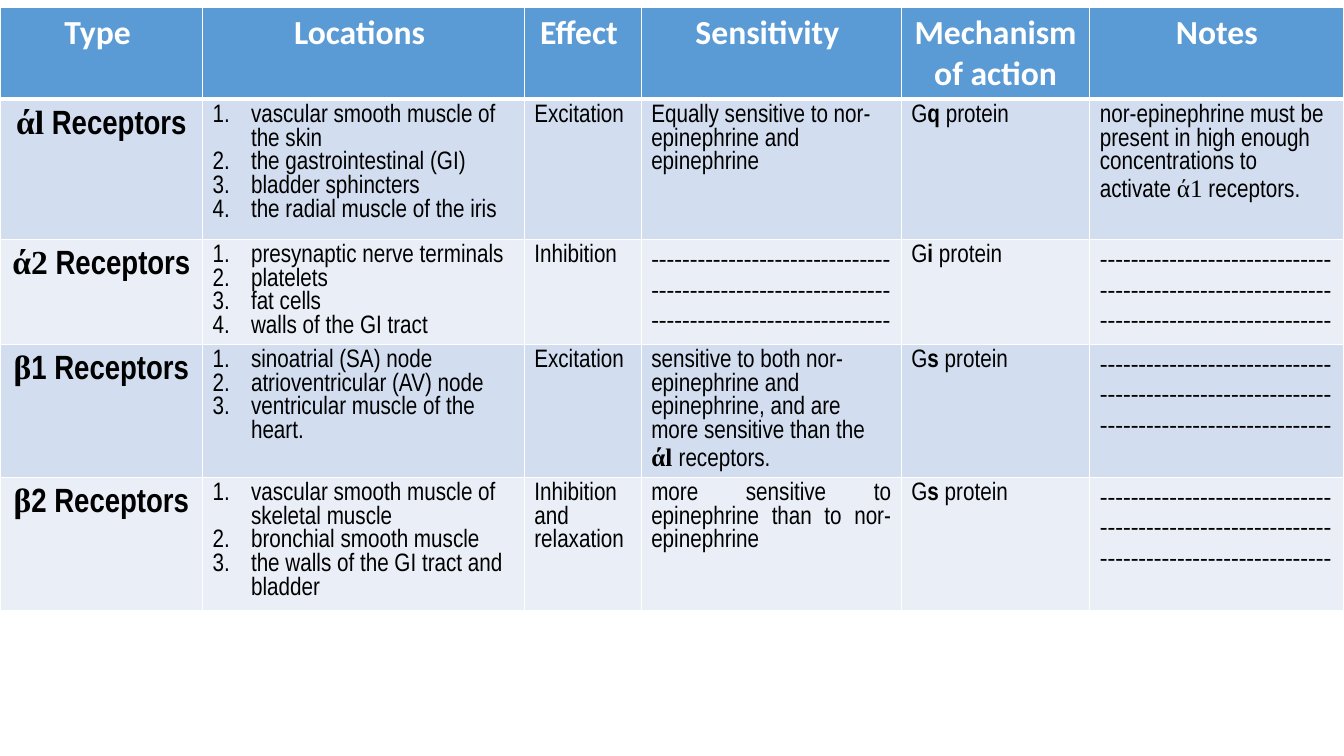
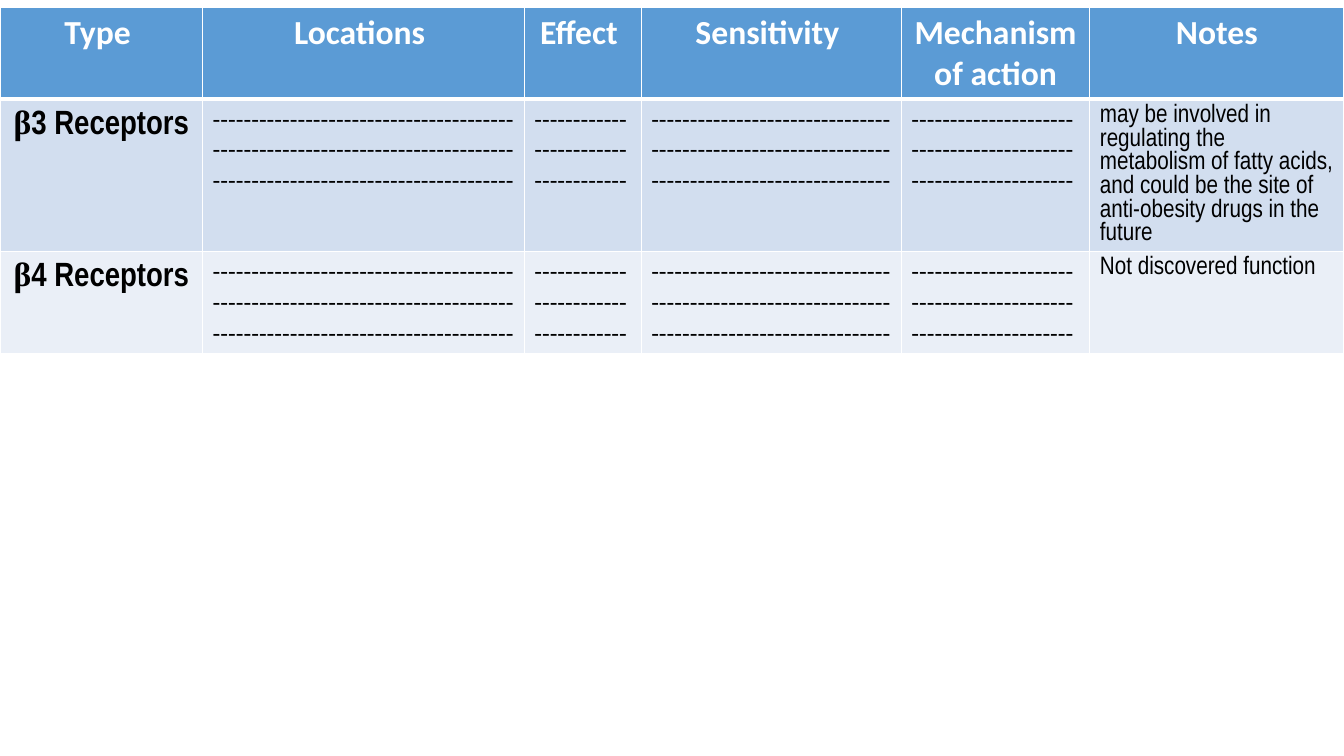
from dataclasses import dataclass

from lxml.etree import SubElement
from pptx import Presentation
from pptx.dml.color import RGBColor
from pptx.enum.text import PP_ALIGN
from pptx.oxml.ns import qn
from pptx.util import Emu, Pt

# Shared look
PIXEL = 9144  # 100 px to the inch
SLIDE_SIZE = (1333, 750)
TABLE_TOP = 7
COLUMN_WIDTHS = (201, 319, 116, 258, 187, 252)
HEADER_HEIGHT = 91
HEADINGS = ("Type ", "Locations ", "Effect ", "Sensitivity ", "Mechanism of action", "Notes")
LIST_INDENT = 38
HEADER_FILL, BAND_FILLS = "5B9BD5", ("D2DEEF", "EAEFF7")
BLACK, WHITE = "000000", "FFFFFF"
CALIBRI, NARROW, TIMES = "Calibri", "Arial Narrow", "Times New Roman"


@dataclass(frozen=True)
class Run:
    text: str
    font: str = NARROW
    bold: bool = False


@dataclass(frozen=True)
class Content:
    paragraphs: tuple[tuple[Run, ...], ...]
    size: int = 18
    color: str = BLACK
    align: PP_ALIGN = PP_ALIGN.LEFT
    numbered: bool = False


@dataclass(frozen=True)
class Receptor:
    height: int
    cells: tuple[Content, ...]


# Kinds of cell content
def heading(text: str) -> Content:
    return Content(((Run(text, CALIBRI, True),),), 24, WHITE, PP_ALIGN.CENTER)


def receptor_name(symbol: str, rest: str) -> Content:
    runs = (Run(symbol, TIMES, True), Run(rest, NARROW, True))
    return Content((runs,), 24, align=PP_ALIGN.CENTER)


def plain(text: str, align: PP_ALIGN = PP_ALIGN.LEFT) -> Content:
    return Content(((Run(text),),), align=align)


def mixed(*runs: Run) -> Content:
    return Content((runs,))


def numbered(*items: str) -> Content:
    return Content(tuple((Run(item),) for item in items), numbered=True)


def protein(letter: str) -> Content:
    return mixed(Run("G"), Run(letter, bold=True), Run(" protein"))


def dashes(count: int) -> Content:
    return mixed(Run("-" * count, CALIBRI))


NO_LOCATION, NO_EFFECT, NO_SENSITIVITY, NO_MECHANISM, NO_NOTES = map(dashes, (117, 36, 93, 63, 90))
UNKNOWN = (NO_LOCATION, NO_EFFECT, NO_SENSITIVITY, NO_MECHANISM)

# Receptors on each slide
SLIDES = (
    (
        Receptor(139, (
            receptor_name("άl", " Receptors"),
            numbered("vascular smooth muscle of the skin", "the gastrointestinal (GI)",
                     "bladder sphincters", "the radial muscle of the iris"),
            plain("Excitation"),
            plain("Equally sensitive to nor-epinephrine and epinephrine"),
            protein("q"),
            mixed(Run("nor-epinephrine must be present in high enough concentrations to activate "),
                  Run("ά1", TIMES), Run(" receptors.")),
        )),
        Receptor(104, (
            receptor_name("ά2", " Receptors"),
            numbered("presynaptic nerve terminals", "platelets", "fat cells",
                     "walls of the GI tract"),
            plain("Inhibition"),
            NO_SENSITIVITY,
            protein("i"),
            NO_NOTES,
        )),
        Receptor(132, (
            receptor_name("β", "1 Receptors"),
            numbered("sinoatrial (SA) node", "atrioventricular (AV) node",
                     "ventricular muscle of the heart."),
            plain("Excitation"),
            mixed(Run("sensitive to both nor-epinephrine and epinephrine, "
                      "and are more sensitive than the "),
                  Run("άl ", TIMES, True), Run("receptors.")),
            protein("s"),
            NO_NOTES,
        )),
        Receptor(132, (
            receptor_name("β", "2 Receptors"),
            numbered("vascular smooth muscle of skeletal muscle", "bronchial smooth muscle",
                     "the walls of the GI tract and bladder"),
            plain("Inhibition and relaxation"),
            plain("more sensitive to epinephrine than to nor-epinephrine", PP_ALIGN.JUSTIFY),
            protein("s"),
            NO_NOTES,
        )),
    ),
    (
        Receptor(151, (
            receptor_name("β", "3 Receptors"),
            *UNKNOWN,
            plain("may be involved in regulating the metabolism of fatty acids, "
                  "and could be the site of anti-obesity drugs in the future"),
        )),
        Receptor(101, (
            receptor_name("β", "4 Receptors"),
            *UNKNOWN,
            plain("Not discovered function"),
        )),
    ),
)


def px(length: int) -> Emu:
    return Emu(length * PIXEL)


def rgb(color: str) -> RGBColor:
    return RGBColor.from_string(color)


def number_paragraph(paragraph) -> None:
    properties = paragraph._p.get_or_add_pPr()
    properties.set("marL", str(px(LIST_INDENT)))
    properties.set("indent", str(-px(LIST_INDENT)))
    numbering = SubElement(properties, qn("a:buAutoNum"), type="arabicPeriod")
    properties.insert(0, numbering)


def write_text(text_frame, content: Content) -> None:
    for index, runs in enumerate(content.paragraphs):
        paragraph = text_frame.add_paragraph() if index else text_frame.paragraphs[0]
        paragraph.alignment = content.align
        if content.numbered:
            number_paragraph(paragraph)
        paragraph.font.size = Pt(content.size)
        paragraph.font.color.rgb = rgb(content.color)
        fonts = {run.font for run in runs}
        weights = {run.bold for run in runs}
        if len(fonts) == 1:
            paragraph.font.name = runs[0].font
        if len(weights) == 1:
            paragraph.font.bold = runs[0].bold
        for part in runs:
            run = paragraph.add_run()
            run.text = part.text
            if len(fonts) > 1:
                run.font.name = part.font
            if len(weights) > 1:
                run.font.bold = part.bold


def set_borders(cell, top: int, bottom: int) -> None:
    properties = cell._tc.get_or_add_tcPr()
    widths = {"a:lnL": 1, "a:lnR": 1, "a:lnT": top, "a:lnB": bottom}
    for position, (side, width) in enumerate(widths.items()):
        line = SubElement(properties, qn(side), w=str(Pt(width)))
        fill = SubElement(line, qn("a:solidFill"))
        SubElement(fill, qn("a:srgbClr"), val=WHITE)
        properties.insert(position, line)  # borders come before the fill


def add_receptor_table(slide, receptors: tuple[Receptor, ...]) -> None:
    rows = (Receptor(HEADER_HEIGHT, tuple(map(heading, HEADINGS))), *receptors)
    height = sum(row.height for row in rows)
    table = slide.shapes.add_table(len(rows), len(COLUMN_WIDTHS), 0, px(TABLE_TOP),
                                   px(sum(COLUMN_WIDTHS)), px(height)).table
    table.first_row = table.horz_banding = False
    for column, width in zip(table.columns, COLUMN_WIDTHS):
        column.width = px(width)
    for row_index, row in enumerate(rows):
        table.rows[row_index].height = px(row.height)
        fill = BAND_FILLS[(row_index - 1) % 2] if row_index else HEADER_FILL
        for column_index, content in enumerate(row.cells):
            cell = table.cell(row_index, column_index)
            cell.fill.solid()
            cell.fill.fore_color.rgb = rgb(fill)
            set_borders(cell, top=3 if row_index == 1 else 1, bottom=1 if row_index else 3)
            write_text(cell.text_frame, content)


def main() -> None:
    presentation = Presentation()
    presentation.slide_width, presentation.slide_height = map(px, SLIDE_SIZE)
    for receptors in SLIDES:
        slide = presentation.slides.add_slide(presentation.slide_layouts[6])
        add_receptor_table(slide, receptors)
    presentation.save("out.pptx")


if __name__ == "__main__":
    main()
